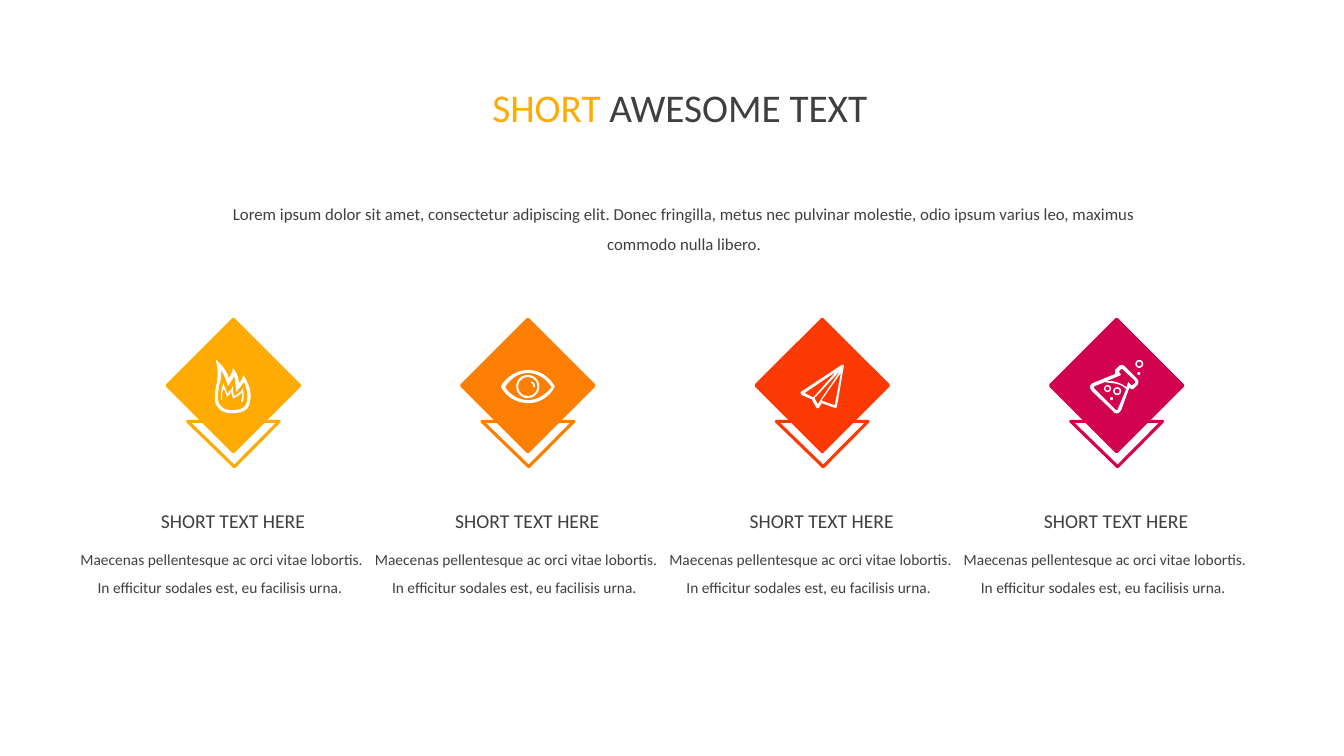
from pptx import Presentation
from pptx.dml.color import RGBColor as Rgb
from pptx.enum.shapes import MSO_SHAPE as Geo
from pptx.enum.text import MSO_AUTO_SIZE as Fit, PP_ALIGN as Align
from pptx.util import Pt

PX = 9144
INK = {"gold": "FFAB03", "orange": "FC7F03", "red": "FC3903",
       "pink": "D1024E", "gray": "3F3F3F", "white": "FFFFFF"}
HEAD = "SHORT TEXT HERE"
BODY = ("Maecenas pellentesque ac orci vitae lobortis. "
        "In efficitur sodales est, eu facilisis urna. ")
LEAD = ("Lorem ipsum dolor sit amet, consectetur adipiscing elit. "
        "Donec fringilla, metus nec pulvinar molestie, odio ipsum "
        "varius leo, maximus commodo nulla libero.")

FLAME = [
    [(56, 36), (56, 41, 52, 44, 52, 44), (52, 36, 46, 29, 46, 29),
     (46, 29, 46, 34, 42, 39), (39, 28, 29, 21, 29, 21),
     (34, 39, 28, 46, 28, 59), (28, 67, 34, 74, 44, 74),
     (59, 74, 62, 69, 63, 62), (65, 54, 62, 44, 56, 36)],
    [(60, 62), (59, 66, 58, 71, 44, 71), (36, 71, 31, 65, 31, 59),
     (31, 55, 32, 51, 32, 47), (34, 42, 35, 37, 34, 31),
     (39, 38, 41, 47, 41, 47), (41, 47, 46, 41, 47, 37),
     (48, 39, 49, 46, 49, 53), (49, 53, 53, 49, 57, 43),
     (60, 50, 61, 56, 60, 62)]]
SPARK = [
    [(56, 49), (55, 51), (53, 53, 51, 55, 47, 57),
     (47, 55, 46, 53, 46, 50), (46, 47), (44, 51),
     (42, 52, 42, 53, 41, 55), (39, 51, 38, 48, 37, 46), (37, 44),
     (36, 46), (35, 49, 34, 53, 34, 60), (35, 61), (35, 60),
     (35, 54, 36, 51, 37, 49), (37, 51, 39, 53, 40, 57), (40, 58),
     (41, 57), (43, 55, 44, 54, 44, 52), (45, 55, 45, 56, 46, 58),
     (46, 59), (47, 59), (51, 57, 54, 55, 55, 53),
     (56, 56, 55, 59, 54, 62), (55, 63), (56, 62),
     (57, 59, 57, 55, 56, 51)]]
EYE = [
    [(73, 47), (68, 38, 58, 31, 47, 31), (36, 31, 25, 38, 20, 47),
     (20, 48), (25, 58, 36, 64, 47, 64), (58, 64, 68, 58, 73, 48)],
    [(47, 61), (37, 61, 28, 55, 24, 48), (29, 40, 37, 34, 47, 34),
     (56, 34, 65, 40, 70, 48), (65, 55, 56, 61, 47, 61)]]
PLANE = [
    [(68, 26), (66, 26), (25, 53), (25, 54), (26, 56), (36, 60), (41, 69),
     (43, 69), (46, 64), (60, 69), (61, 68), (68, 27)],
    [(29, 54), (60, 33), (38, 58), (37, 58)],
    [(39, 59), (65, 31), (42, 65)],
    [(59, 66), (47, 62), (46, 61), (65, 34)]]
FLASK = [
    [(54, 27), (54, 27, 52, 26, 52, 26), (50, 26, 49, 27, 49, 27),
     (46, 30), (45, 30, 45, 32, 45, 33), (45, 35), (23, 44),
     (22, 44, 21, 46, 20, 47), (20, 49, 21, 51, 22, 52), (43, 72),
     (44, 74, 45, 74, 46, 74), (47, 74), (49, 74, 50, 72, 51, 71),
     (59, 49), (60, 49, 61, 50, 62, 50), (63, 50, 64, 49, 65, 48),
     (67, 46), (68, 45, 68, 44, 68, 43), (68, 42, 68, 41, 67, 40)],
    [(48, 69), (48, 70, 47, 71, 47, 71), (46, 71), (45, 70), (24, 49),
     (24, 48), (25, 47), (35, 43), (42, 45, 49, 43, 56, 50)],
    [(65, 44), (62, 46), (61, 46), (58, 43), (56, 49), (56, 48),
     (51, 44, 46, 43, 42, 42), (40, 42, 39, 42, 37, 42), (51, 36),
     (49, 33), (49, 32), (51, 30), (52, 30), (65, 42)]]


def trace(loop):
    pts = [loop[0]]
    for seg in loop[1:]:
        if len(seg) == 2:
            pts.append(seg)
            continue
        ends = pts[-1] + seg
        for step in range(1, 9):
            t = step / 8
            mix = ((1 - t) ** 3, 3 * t * (1 - t) ** 2, 3 * t * t * (1 - t), t ** 3)
            pts.append(tuple(sum(m * v for m, v in zip(mix, ends[k::2]))
                             for k in (0, 1)))
    return pts


class Deck:
    """Draws styled elements on one slide, in px."""

    def __init__(self, wide, high, font):
        self.file = Presentation()
        self.file.slide_width, self.file.slide_height = wide * PX, high * PX
        self.page = self.file.slides.add_slide(self.file.slide_layouts[6]).shapes
        self.font = font

    def paint(self, item, fill=None, line=None, width=2.25):
        item.shadow.inherit = False
        if fill:
            item.fill.solid()
            item.fill.fore_color.rgb = Rgb.from_string(INK[fill])
        else:
            item.fill.background()
        if line:
            item.line.color.rgb = Rgb.from_string(INK[line])
            item.line.width = Pt(width)
        else:
            item.line.fill.background()

    def shape(self, geo, box, turn=0, adj=(), **look):
        item = self.page.add_shape(geo, *(v * PX for v in box))
        item.rotation = turn
        for k, v in enumerate(adj):
            item.adjustments[k] = v
        self.paint(item, **look)

    def icon(self, x, y, loops):
        pen = None
        for loop in loops:
            pts = [((x + a) * PX, (y + b) * PX) for a, b in trace(loop)]
            if pen:
                pen.move_to(*pts[0])
            else:
                pen = self.page.build_freeform(*pts[0], scale=1.0)
            pen.add_line_segments(pts[1:], close=True)
        self.paint(pen.convert_to_shape(), fill="white")

    def text(self, box, runs, size, space=1.5):
        frame = self.page.add_textbox(*(v * PX for v in box)).text_frame
        frame.word_wrap = True
        frame.auto_size = Fit.SHAPE_TO_FIT_TEXT
        para = frame.paragraphs[0]
        para.alignment = Align.CENTER
        para.line_spacing = space
        for words, ink in runs:
            run = para.add_run()
            run.text = words
            run.font.name, run.font.size = self.font, Pt(size)
            run.font.color.rgb = Rgb.from_string(INK[ink])


def main():
    deck = Deck(1333, 750, "Calibri")
    top, left, step = 336, 185, 292
    cols = [("gold", [FLAME, SPARK], [], []),
            ("orange", [EYE], [(35, 36, 23, 0.08)], []),
            ("red", [PLANE], [], []),
            ("pink", [FLASK],
             [(43, 48, 8, 0.2), (65, 21, 8, 0.2), (34, 46, 7, 0.2)],
             [(40, 58), (67, 33)])]
    for i, (ink, icons, rings, dots) in enumerate(cols):
        x = left + step * i
        deck.shape(Geo.ISOSCELES_TRIANGLE, (x + 1, top + 82, 91, 45),
                   turn=180, adj=[0.49], line=ink)
        deck.shape(Geo.RECTANGLE, (x, top, 93, 93), turn=45, fill=ink, line=ink)
        for loops in icons:
            deck.icon(x, top, loops)
        for a, b, size, rim in rings:
            deck.shape(Geo.DONUT, (x + a, top + b, size, size),
                       adj=[rim], fill="white")
        for a, b in dots:
            deck.shape(Geo.OVAL, (x + a, top + b, 3, 3), fill="white")
        deck.text((x - 122, 532, 314, 63), [(BODY, "gray")], 11)
        deck.text((x - 100, 488, 292, 42), [(HEAD, "gray")], 14)
    deck.shape(Geo.ARC, (left + step + 41, top + 42, 12, 12),
               adj=[180, -90], line="white", width=1.25)
    deck.text((206, 78, 945, 57),
              [("SHORT", "gold"), (" AWESOME TEXT ", "gray")], 28, space=1.0)
    deck.text((206, 187, 945, 68), [(LEAD, "gray")], 12)
    deck.file.save("out.pptx")


if __name__ == "__main__":
    main()
